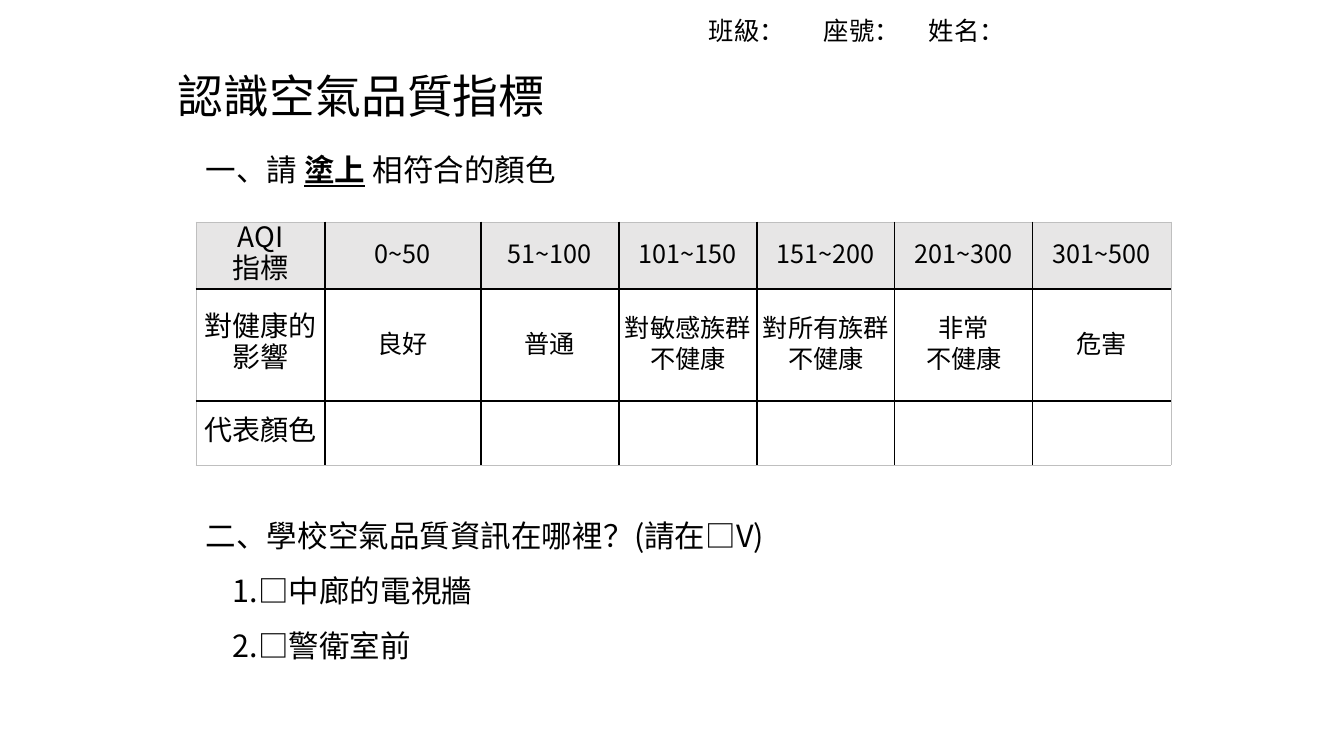
from lxml.etree import SubElement
from pptx import Presentation
from pptx.dml.color import RGBColor
from pptx.enum.text import MSO_ANCHOR, PP_ALIGN
from pptx.oxml.ns import qn
from pptx.util import Emu, Pt

SCALE = 914400 / 100.8
FONT = "Noto Sans CJK SC"
FORM_FONT = "Noto Sans CJK JP"
COLORS = {"text": "000000", "header": "E7E6E6", "inner": "000000", "outer": "BFBFBF"}
COLS = [129] + [156] + [138] * 5
ROWS = [67, 112, 64]
AQI = [
    ["AQI\n指標", "0~50", "51~100", "101~150", "151~200", "201~300", "301~500"],
    ["對健康的\n影響", "良好", "普通", "對敏感族群\n不健康", "對所有族群\n不健康",
     "非常\n不健康", "危害"],
    ["代表顏色"] + [""] * 6,
]


def px(n):
    """Turn pixels into EMU."""
    return Emu(round(n * SCALE))


def add_run(p, text, size, font=FONT, strong=False):
    """Add a run; strong text is bold and underlined."""
    r = p.add_run()
    r.text = text
    f = r.font
    f.size, f.name = Pt(size), font
    f.color.rgb = RGBColor.from_string(COLORS["text"])
    f.bold = f.underline = strong
    SubElement(f._element, qn("a:ea"), typeface=font)


def add_text(s, x, y, w, h, anchor=MSO_ANCHOR.TOP):
    """Add a wrapping text box and return its text frame."""
    tf = s.shapes.add_textbox(px(x), px(y), px(w), px(h)).text_frame
    tf.word_wrap = True
    tf.vertical_anchor = anchor
    return tf


def set_tabs(p, stops):
    """Set left tab stops on a paragraph."""
    tabs = SubElement(p._p.get_or_add_pPr(), qn("a:tabLst"))
    for stop in stops:
        SubElement(tabs, qn("a:tab"), pos=str(px(stop)), algn="l")


def set_border(cell, side, outer):
    """Draw one cell edge, lighter on the outside of the table."""
    ln = SubElement(cell._tc.get_or_add_tcPr(), qn(f"a:ln{side}"),
                    w=str(Pt(0.5 if outer else 1)))
    fill = SubElement(ln, qn("a:solidFill"))
    SubElement(fill, qn("a:srgbClr"), val=COLORS["outer" if outer else "inner"])


def fill_cell(cell, text, row, col):
    """Write and style one table cell."""
    cell.vertical_anchor = MSO_ANCHOR.MIDDLE
    cell.margin_left = cell.margin_right = px(6)
    cell.margin_top = cell.margin_bottom = 0
    edges = {"L": col == 0, "R": col == len(COLS) - 1,
             "T": row == 0, "B": row == len(ROWS) - 1}
    for side, outer in edges.items():
        set_border(cell, side, outer)
    if row == 0:
        cell.fill.solid()
        cell.fill.fore_color.rgb = RGBColor.from_string(COLORS["header"])
    else:
        cell.fill.background()
    p = cell.text_frame.paragraphs[0]
    p.alignment = PP_ALIGN.CENTER
    p.line_spacing = Pt(22)
    for i, line in enumerate(text.split("\n")):
        if i:
            p.add_line_break()
        if line:
            add_run(p, line, 18 if col else 20)


def add_aqi_table(s, x, y):
    """Add the air quality table."""
    tbl = s.shapes.add_table(len(ROWS), len(COLS), px(x), px(y),
                             px(sum(COLS)), px(sum(ROWS))).table
    tbl.first_row = tbl.horz_banding = False
    for column, w in zip(tbl.columns, COLS):
        column.width = px(w)
    for i, (row, h) in enumerate(zip(tbl.rows, ROWS)):
        row.height = px(h)
        for j, text in enumerate(AQI[i]):
            fill_cell(tbl.cell(i, j), text, i, j)


def add_question(s, x, y, w, h, lines):
    """Add a question followed by indented answers."""
    tf = add_text(s, x, y, w, h)
    for i, line in enumerate(lines):
        p = tf.add_paragraph() if i else tf.paragraphs[0]
        p.line_spacing = 1.5
        if i:
            p._p.get_or_add_pPr().set("marL", str(px(27)))
        add_run(p, line, 21.8)


def main():
    """Build the worksheet slide."""
    prs = Presentation()
    prs.slide_width, prs.slide_height = px(1344), px(756)
    s = prs.slides.add_slide(prs.slide_layouts[6])

    p = add_text(s, 168, 43, 572, 111, MSO_ANCHOR.MIDDLE).paragraphs[0]
    p.line_spacing = 0.9
    add_run(p, "認識空氣品質指標", 32.7)

    add_aqi_table(s, 196, 222)

    p = add_text(s, 699, 10, 406, 41).paragraphs[0]
    set_tabs(p, [115, 220])
    add_run(p, "班級：\t座號：\t姓名：", 18.1, FORM_FONT)

    p = add_text(s, 196, 146, 544, 47).paragraphs[0]
    add_run(p, "一、請 ", 21.8)
    add_run(p, "塗上", 21.8, strong=True)
    add_run(p, " 相符合的顏色", 21.8)

    add_question(s, 196, 494, 842, 167,
                 ["二、學校空氣品質資訊在哪裡？(請在□V)", "1.□中廊的電視牆", "2.□警衛室前"])
    prs.save("out.pptx")


if __name__ == "__main__":
    main()
